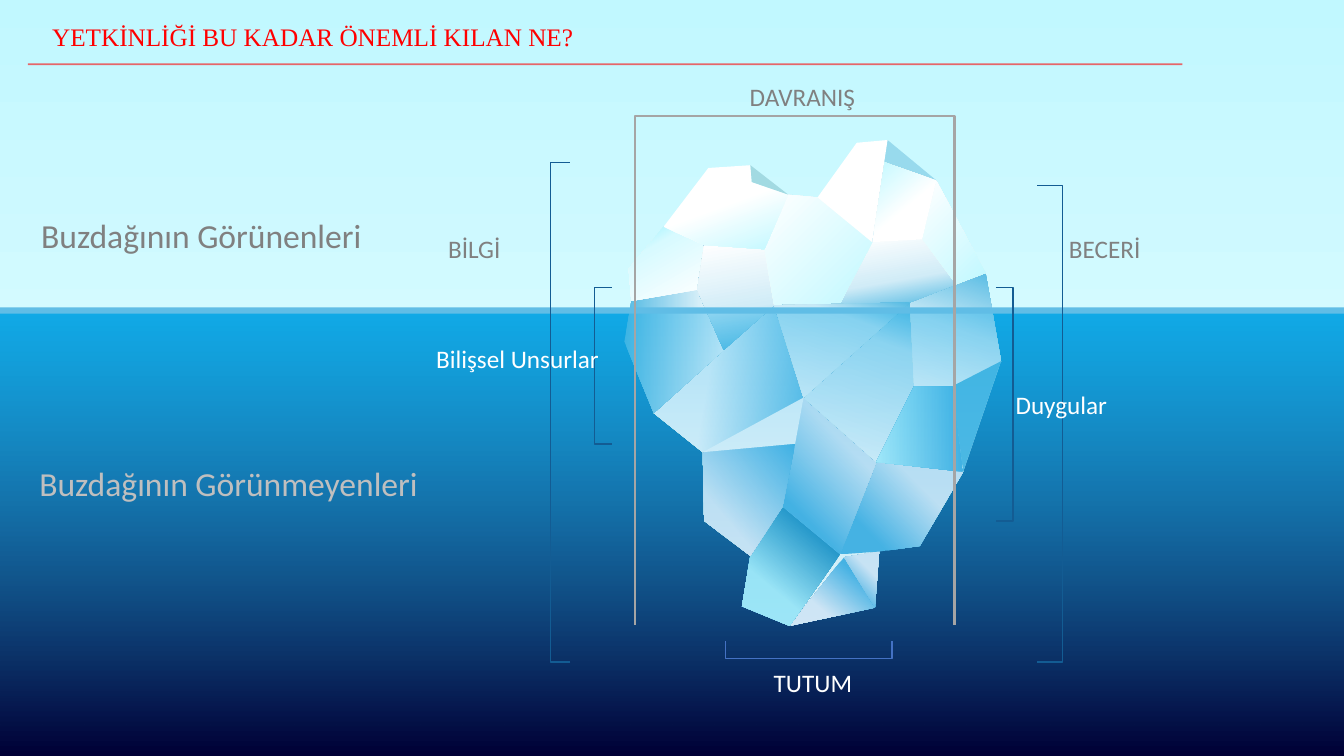
"""Build the iceberg slide on visible and hidden parts of competence."""
from dataclasses import dataclass
from enum import Enum

from lxml.etree import SubElement
from pptx import Presentation
from pptx.dml.color import RGBColor
from pptx.enum.shapes import MSO_CONNECTOR, MSO_SHAPE
from pptx.enum.text import MSO_ANCHOR, PP_ALIGN
from pptx.oxml.ns import qn
from pptx.shapes.autoshape import Shape
from pptx.slide import Slide
from pptx.util import Pt

Point = tuple[float, float]
WHITE, GRAY, RED = "FFFFFF", "808080", "FF0000"
DEEP, SKY, PALE, AZURE, SEA = "53BAE3", "60BDE6", "C1F8FF", "45B1E3", "11AAE7"
SLIDE_WIDTH, SLIDE_HEIGHT = 960, 540
SEA_TOP = 222.5


class Opening(Enum):
    LEFT = "left"
    RIGHT = "right"
    UP = "up"
    DOWN = "down"


@dataclass(frozen=True)
class Stop:
    position: int
    color: str
    opacity: int = 100


@dataclass(frozen=True)
class Paint:
    stops: tuple[Stop, ...]
    angle: int = 0


@dataclass(frozen=True)
class Facet:
    corners: str
    paint: Paint


@dataclass(frozen=True)
class Bracket:
    opening: Opening
    left: float
    top: float
    width: float
    height: float
    color: str = "135C93"
    weight: float = 1


@dataclass(frozen=True)
class Label:
    text: str
    left: float
    top: float
    width: float
    color: str


def solid(color: str, opacity: int = 100) -> Paint:
    return Paint((Stop(0, color, opacity),))


def blend(angle: int, first: str, last: str, start: int = 0, end: int = 100,
          middle: tuple[Stop, ...] = ()) -> Paint:
    return Paint((Stop(start, first), *middle, Stop(end, last)), angle)


def ice(angle: int) -> Paint:
    return blend(angle, AZURE, "DEEBF7", 23, 69)


def glacier(middle: int) -> Paint:
    return blend(110, DEEP, WHITE, middle=(Stop(middle, "C7E9F6"),))


SHADE = blend(260, DEEP, WHITE, middle=(Stop(40, "D1ECF7"),))
MIST = blend(45, WHITE, PALE)
VEIL = Paint((Stop(0, SEA, 37), Stop(100, "7AC7EA", 0)), 90)

VERTICES: dict[str, Point] = {
    "A": (474, 162), "B": (503, 175), "C": (546, 178), "D": (563, 139), "E": (537, 130),
    "F": (536, 118), "G": (506, 120), "H": (584, 141), "I": (612, 102), "J": (634, 100),
    "K": (623, 173), "L": (632, 116), "M": (669, 129), "N": (659, 171), "O": (704, 195),
    "P": (683, 203), "Q": (650, 216), "R": (600, 217), "S": (553, 218), "T": (449, 192),
    "U": (451, 215), "V": (498, 207), "W": (517, 250), "X": (446, 244), "Y": (467, 295),
    "Z": (502, 323), "a": (574, 284), "b": (568, 317), "c": (559, 362), "d": (536, 397),
    "e": (503, 372), "f": (530, 433), "g": (564, 447), "h": (600, 396), "i": (626, 330),
    "j": (653, 276), "k": (680, 276), "l": (715, 258), "m": (688, 337), "n": (657, 390),
    "o": (628, 394), "p": (625, 434), "q": (603, 398),
}

TIP_GLOW = Facet("TADHJMO", solid("1E91C4", 29))
FACETS = [
    Facet("TUYZdgpomlO", solid("ECFAFC")),
    Facet("gqp", ice(130)),
    Facet("qpo", ice(315)),
    Facet("imnoh", ice(315)),
    Facet("dfghc", blend(130, "1E91C4", "A5EBF9", 23, 69)),
    Facet("achi", ice(315)),
    Facet("Zbcde", blend(140, AZURE, "DEEBF7", end=71)),
    Facet("YZaS", blend(190, SKY, WHITE, end=62)),
    Facet("aQji", glacier(26)),
    Facet("Zab", solid(WHITE)),
    Facet("XUVWY", blend(0, DEEP, WHITE)),
    Facet("UTABV", blend(240, WHITE, "93F2FF", middle=(Stop(71, "D8FAFF"),))),
    Facet("BCSWV", SHADE),
    Facet("OlkjQ", glacier(50)),
    Facet("kmij", blend(180, AZURE, PALE)),
    Facet("KNPQR", SHADE),
    Facet("CDHKRS", MIST),
    Facet("HIJK", solid(WHITE)),
    Facet("LMNK", blend(230, WHITE, PALE, start=44)),
    Facet("NMOP", MIST),
    Facet("ABCDEFG", blend(70, WHITE, PALE, start=48)),
    Facet("EFD", solid("A2DAE2")),
    Facet("lmk", solid(DEEP)),
    Facet("SQa", glacier(26)),
]

BRACKETS = [
    Bracket(Opening.DOWN, 453.6, 82.8, 228.2, 363.6, "A5A5A5", 1.5),
    Bracket(Opening.RIGHT, 424.8, 205.2, 12.2, 112),
    Bracket(Opening.LEFT, 711.4, 205.2, 12.2, 167),
    Bracket(Opening.UP, 518.4, 458, 118.8, 12.2, "4472C4"),
    Bracket(Opening.RIGHT, 393.1, 116, 14.4, 357),
    Bracket(Opening.LEFT, 741, 132.5, 18, 340.5),
]

LABELS = [
    Label("DAVRANIŞ", 527.8, 54.7, 90.7, GRAY),
    Label("TUTUM", 545, 473, 71.3, WHITE),
    Label("Bilişsel Unsurlar", 303.8, 241.9, 131.8, WHITE),
    Label("Duygular", 717.8, 274.3, 80.6, WHITE),
    Label("BİLGİ", 312.5, 163.4, 52.6, GRAY),
    Label("BECERİ", 756, 163.4, 66.2, GRAY),
]


def add_alpha(color_element, opacity: int) -> None:
    if opacity < 100:
        SubElement(color_element, qn("a:alpha")).set("val", str(opacity * 1000))


def apply_paint(shape: Shape, paint: Paint) -> None:
    shape.shadow.inherit = False
    shape.line.fill.background()
    if len(paint.stops) == 1:
        shape.fill.solid()
        shape.fill.fore_color.rgb = RGBColor.from_string(paint.stops[0].color)
        add_alpha(shape._element.spPr.find(".//" + qn("a:srgbClr")), paint.stops[0].opacity)
        return
    shape.fill.gradient()
    shape.fill.gradient_angle = 360 - paint.angle
    stop_list = shape._element.spPr.find(".//" + qn("a:gsLst"))
    for preset in list(stop_list):
        stop_list.remove(preset)
    for stop in paint.stops:
        entry = SubElement(stop_list, qn("a:gs"), pos=str(stop.position * 1000))
        add_alpha(SubElement(entry, qn("a:srgbClr"), val=stop.color), stop.opacity)


def add_band(slide: Slide, top: float, bottom: float, paint: Paint) -> None:
    band = slide.shapes.add_shape(
        MSO_SHAPE.RECTANGLE, 0, Pt(top), Pt(SLIDE_WIDTH), Pt(bottom - top))
    apply_paint(band, paint)


def add_outline(slide: Slide, points: list[Point], close: bool) -> Shape:
    start, *rest = [(Pt(x), Pt(y)) for x, y in points]
    builder = slide.shapes.build_freeform(*start)
    builder.add_line_segments(rest, close=close)
    return builder.convert_to_shape()


def add_facet(slide: Slide, facet: Facet) -> None:
    outline = add_outline(slide, [VERTICES[corner] for corner in facet.corners], True)
    apply_paint(outline, facet.paint)


def add_bracket(slide: Slide, bracket: Bracket) -> None:
    right, bottom = bracket.left + bracket.width, bracket.top + bracket.height
    corners = [(bracket.left, bracket.top), (right, bracket.top),
               (right, bottom), (bracket.left, bottom)]
    turn = [Opening.LEFT, Opening.UP, Opening.RIGHT, Opening.DOWN].index(bracket.opening)
    stroke = add_outline(slide, corners[turn:] + corners[:turn], False)
    stroke.shadow.inherit = False
    stroke.fill.background()
    stroke.line.color.rgb = RGBColor.from_string(bracket.color)
    stroke.line.width = Pt(bracket.weight)


def add_text(slide: Slide, text: str, left: float, top: float, width: float, height: float, *,
             color: str, size: float = 18, font: str = "Calibri", wrap: bool = True,
             align: PP_ALIGN = PP_ALIGN.LEFT, anchor: MSO_ANCHOR = MSO_ANCHOR.TOP,
             spacing: float = 1.0) -> None:
    frame = slide.shapes.add_textbox(Pt(left), Pt(top), Pt(width), Pt(height)).text_frame
    frame.word_wrap, frame.vertical_anchor = wrap, anchor
    paragraph = frame.paragraphs[0]
    paragraph.text, paragraph.alignment, paragraph.line_spacing = text, align, spacing
    paragraph.font.name, paragraph.font.size = font, Pt(size)
    paragraph.font.color.rgb = RGBColor.from_string(color)


def add_heading_rule(slide: Slide) -> None:
    rule = slide.shapes.add_connector(MSO_CONNECTOR.STRAIGHT, Pt(20), Pt(46), Pt(844.6), Pt(46))
    rule.line.color.rgb = RGBColor.from_string(RED)
    rule.line.width = Pt(1.25)
    properties = rule._element.spPr
    add_alpha(properties.find(".//" + qn("a:srgbClr")), 59)
    SubElement(properties, qn("a:effectLst"))


def main() -> None:
    deck = Presentation()
    deck.slide_width, deck.slide_height = Pt(SLIDE_WIDTH), Pt(SLIDE_HEIGHT)
    slide = deck.slides.add_slide(deck.slide_layouts[6])
    add_band(slide, -7, 260, blend(90, PALE, "D5FAFF"))
    add_facet(slide, TIP_GLOW)
    add_band(slide, SEA_TOP, SLIDE_HEIGHT, blend(90, SEA, "000036"))
    for facet in FACETS:
        add_facet(slide, facet)
    add_band(slide, SEA_TOP, SLIDE_HEIGHT, VEIL)
    add_band(slide, 219.6, 224, solid(SKY))
    for bracket in BRACKETS:
        add_bracket(slide, bracket)
    for label in LABELS:
        add_text(slide, label.text, label.left, label.top, label.width, 29,
                 color=label.color, wrap=False, align=PP_ALIGN.CENTER)
    add_text(slide, "Buzdağının Görünenleri", 22.3, 141.8, 295, 56,
             color=GRAY, size=24, anchor=MSO_ANCHOR.MIDDLE, spacing=0.9)
    add_text(slide, "Buzdağının Görünmeyenleri", 21, 327, 328, 36, color="BFBFBF", size=24)
    add_text(slide, "YETKİNLİĞİ BU KADAR ÖNEMLİ KILAN NE?", 30.2, 0, 824.4, 54.7,
             color=RED, font="Times New Roman", anchor=MSO_ANCHOR.MIDDLE, spacing=0.9)
    add_heading_rule(slide)
    deck.save("out.pptx")


if __name__ == "__main__":
    main()
